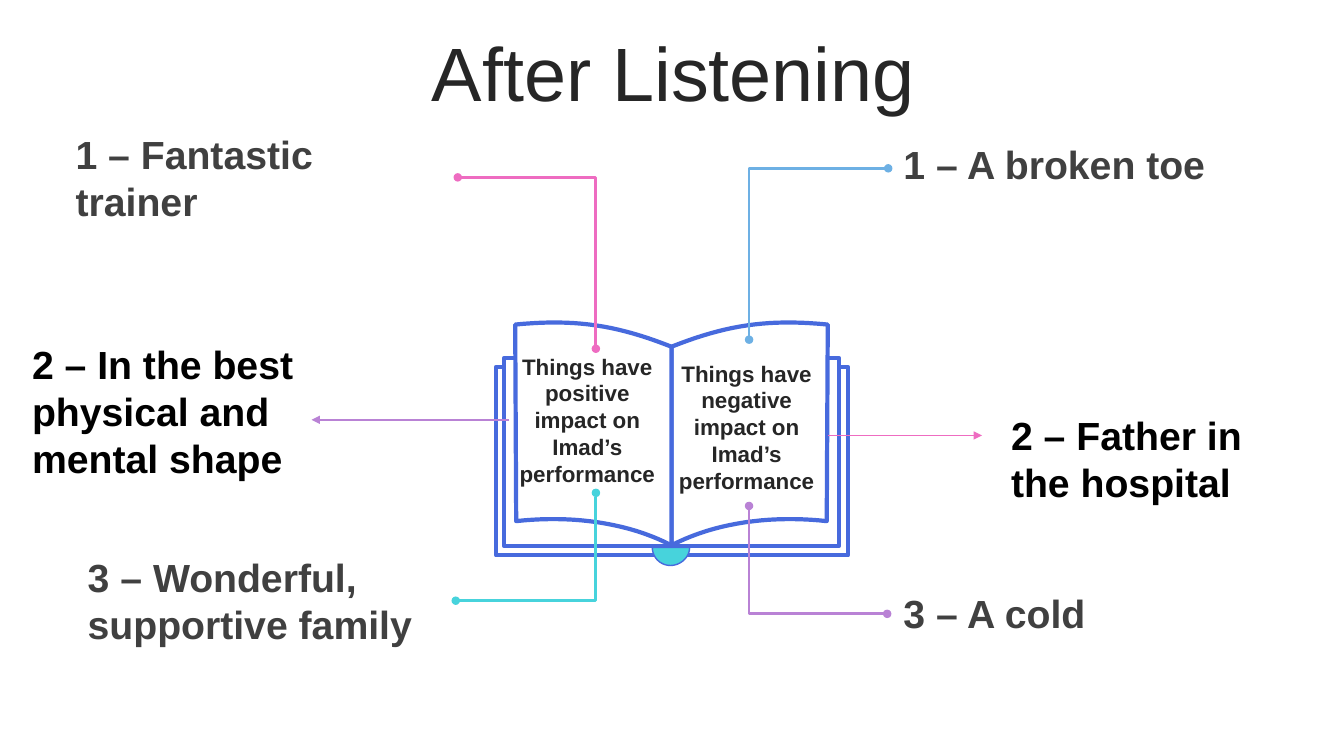
from dataclasses import dataclass

from lxml import etree
from pptx import Presentation
from pptx.dml.color import RGBColor
from pptx.enum.shapes import MSO_CONNECTOR, MSO_SHAPE
from pptx.enum.text import MSO_ANCHOR, MSO_AUTO_SIZE, PP_ALIGN
from pptx.oxml.ns import qn
from pptx.util import Inches, Pt

TOP, MIDDLE = MSO_ANCHOR.TOP, MSO_ANCHOR.MIDDLE
LEFT, CENTER = PP_ALIGN.LEFT, PP_ALIGN.CENTER
NO_FIT, GROW = MSO_AUTO_SIZE.NONE, MSO_AUTO_SIZE.SHAPE_TO_FIT_TEXT
ELBOW, STRAIGHT = MSO_CONNECTOR.ELBOW, MSO_CONNECTOR.STRAIGHT
LEFT_SIDE = 1


@dataclass(frozen=True)
class Theme:
    font: str = "Arial"
    title_size: int = 54
    answer_size: int = 28
    page_size: int = 16
    dark: str = "262626"
    grey: str = "404040"
    black: str = "000000"
    white: str = "FFFFFF"
    blue: str = "476ADD"
    teal: str = "47D3DC"
    violet: str = "B982D5"
    pink: str = "EE6CC1"
    sky: str = "6DB0E4"


THEME = Theme()

# Content; the grid has columns and rows of one inch: (left, top, width, height)
WIDTH, HEIGHT = 13.33, 7.5
TITLE = ("After Listening", (0.35, 0.37, 12.66, 0.79))
OUTER_ANSWERS = [
    ("3 – A cold", (8.96, 5.79, 3.49, 0.57)),
    ("1 – A broken toe", (8.96, 1.34, 3.49, 0.57)),
    ("3 – Wonderful, supportive family", (0.87, 5.44, 3.49, 1.04)),
    ("1 – Fantastic trainer", (0.75, 1.24, 3.49, 1.04)),
]
MIDDLE_ANSWERS = [
    ("2 – Father in the hospital", (9.93, 4.03, 3.07, 1.04)),
    ("2 – In the best physical and mental shape", (0.22, 3.33, 2.8, 1.99)),
]
PAGE_LABELS = [
    ("Things have positive impact on Imad’s performance", (5.05, 3.44, 1.55, 1.45)),
    ("Things have negative impact on Imad’s performance", (6.63, 3.51, 1.55, 1.45)),
]
# Answer end, page end, colour
BRANCHES = [
    ((4.52, 5.96), (5.91, 4.89), THEME.teal),
    ((8.8, 6.09), (7.43, 5.02), THEME.violet),
    ((4.54, 1.76), (5.91, 3.46), THEME.pink),
    ((8.81, 1.67), (7.43, 3.37), THEME.sky),
]
COVERS = [(4.92, 3.64, 3.49, 1.87), (5, 3.55, 3.32, 1.87)]
SPINE = 6.66
# Right page edges as cubic curves, measured outward from the spine
PAGE_TOP = [(0, 3.44), (0.53, 3.23), (0.94, 3.16), (1.55, 3.22)]
PAGE_BOTTOM = [(1.54, 5.17), (1, 5.11), (0.44, 5.18), (0, 5.41)]
BOOKMARK = [
    [(6.84, 5.43), (6.84, 5.53), (6.75, 5.61), (6.65, 5.61)],
    [(6.65, 5.61), (6.55, 5.61), (6.47, 5.53), (6.47, 5.43)],
]


def color(value):
    return RGBColor.from_string(value)


def write(shape, text, size, ink, align=LEFT, anchor=TOP, bold=True, fit=GROW):
    frame = shape.text_frame
    frame.text = text
    frame.word_wrap = True
    frame.auto_size = fit
    frame.vertical_anchor = anchor
    paragraph = frame.paragraphs[0]
    paragraph.alignment = align
    font = paragraph.runs[0].font
    font.name, font.size, font.bold = THEME.font, Pt(size), bold
    font.color.rgb = color(ink)
    return frame


def add_text(slide, text, box, size, ink, **options):
    shape = slide.shapes.add_textbox(*map(Inches, box))
    write(shape, text, size, ink, **options)
    return shape


def paint(shape, fill, line_width):
    shape.shadow.inherit = False
    shape.fill.solid()
    shape.fill.fore_color.rgb = color(fill)
    shape.line.color.rgb = color(THEME.blue)
    shape.line.width = Pt(line_width)


def curve(points, steps=20):
    """Points along a cubic curve."""
    result = []
    for step in range(steps + 1):
        t = step / steps
        weights = ((1 - t) ** 3, 3 * t * (1 - t) ** 2, 3 * t**2 * (1 - t), t**3)
        result.append(tuple(
            sum(weight * point[axis] for weight, point in zip(weights, points))
            for axis in (0, 1)
        ))
    return result


def add_outline(slide, points, fill, line_width):
    corners = [(Inches(x), Inches(y)) for x, y in points]
    builder = slide.shapes.build_freeform(*corners[0])
    builder.add_line_segments(corners[1:], close=True)
    paint(builder.convert_to_shape(), fill, line_width)


def add_line(slide, kind, start, end, ink, width, head=None, tail=None):
    connector = slide.shapes.add_connector(kind, *map(Inches, start + end))
    connector.line.color.rgb = color(ink)
    connector.line.width = Pt(width)
    outline = connector.line._get_or_add_ln()
    for tag, arrow in (("a:headEnd", head), ("a:tailEnd", tail)):
        if arrow:
            etree.SubElement(outline, qn(tag), type=arrow)
    properties = connector._element.spPr
    etree.SubElement(properties, qn("a:effectLst"))
    if kind == ELBOW:  # Turn the corner at the far end
        guides = properties.find(qn("a:prstGeom")).get_or_add_avLst()
        etree.SubElement(guides, qn("a:gd"), name="adj1", fmla="val 100000")
    return connector


def add_book(slide):
    for box in COVERS:
        cover = slide.shapes.add_shape(MSO_SHAPE.RECTANGLE, *map(Inches, box))
        paint(cover, THEME.white, 3)
    page = curve(PAGE_TOP) + curve(PAGE_BOTTOM)
    for side in (1, -1):
        add_outline(slide, [(SPINE + side * x, y) for x, y in page], THEME.white, 3)
    add_outline(slide, curve(BOOKMARK[0]) + curve(BOOKMARK[1]), THEME.teal, 1)


def main():
    presentation = Presentation()
    presentation.slide_width = Inches(WIDTH)
    presentation.slide_height = Inches(HEIGHT)
    slide = presentation.slides.add_slide(presentation.slide_layouts[5])

    # Title
    text, box = TITLE
    title = slide.shapes.title
    title.left, title.top, title.width, title.height = map(Inches, box)
    frame = write(title, text, THEME.title_size, THEME.dark, align=CENTER,
                  anchor=MIDDLE, bold=False, fit=NO_FIT)
    frame.paragraphs[0].line_spacing = 0.9

    add_book(slide)

    # Outer answers and their branches
    for text, box in OUTER_ANSWERS:
        answer = add_text(slide, text, box, THEME.answer_size, THEME.grey, anchor=MIDDLE)
        answer.text_frame.margin_left = 0
    for start, end, ink in BRANCHES:
        add_line(slide, ELBOW, start, end, ink, 2, head="oval", tail="oval")

    # Page labels
    positive, _ = [
        add_text(slide, text, box, THEME.page_size, THEME.dark, align=CENTER, anchor=MIDDLE)
        for text, box in PAGE_LABELS
    ]

    # Middle answers and their arrows
    add_line(slide, STRAIGHT, (8.21, 4.32), (9.74, 4.32), THEME.pink, 0.5, tail="triangle")
    arrow = add_line(slide, STRAIGHT, (5.05, 4.17), (3.09, 4.17), THEME.violet, 1.5,
                     tail="triangle")
    arrow.begin_connect(positive, LEFT_SIDE)
    arrow.end_y = arrow.begin_y
    for text, box in MIDDLE_ANSWERS:
        add_text(slide, text, box, THEME.answer_size, THEME.black)

    presentation.save("out.pptx")


if __name__ == "__main__":
    main()
